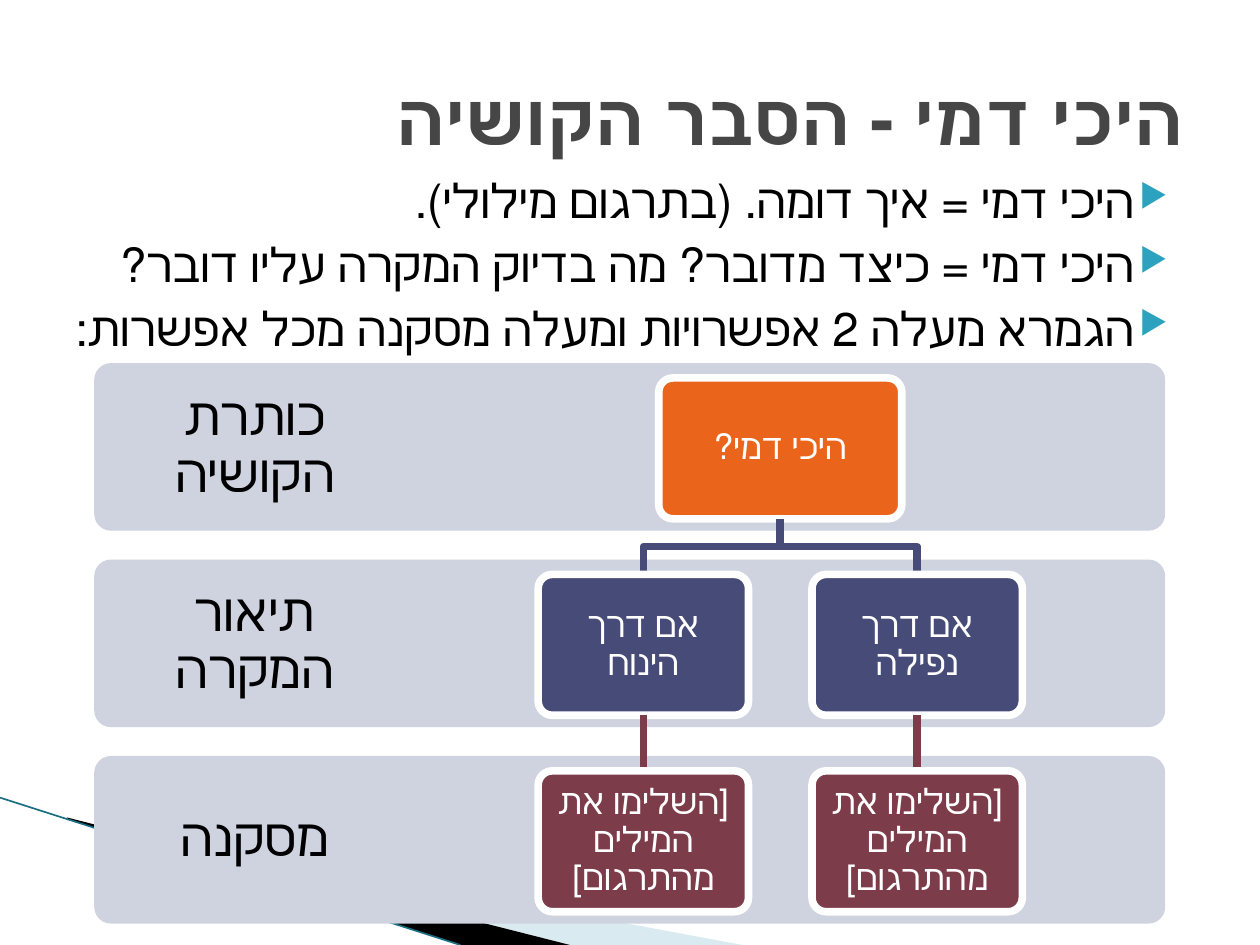
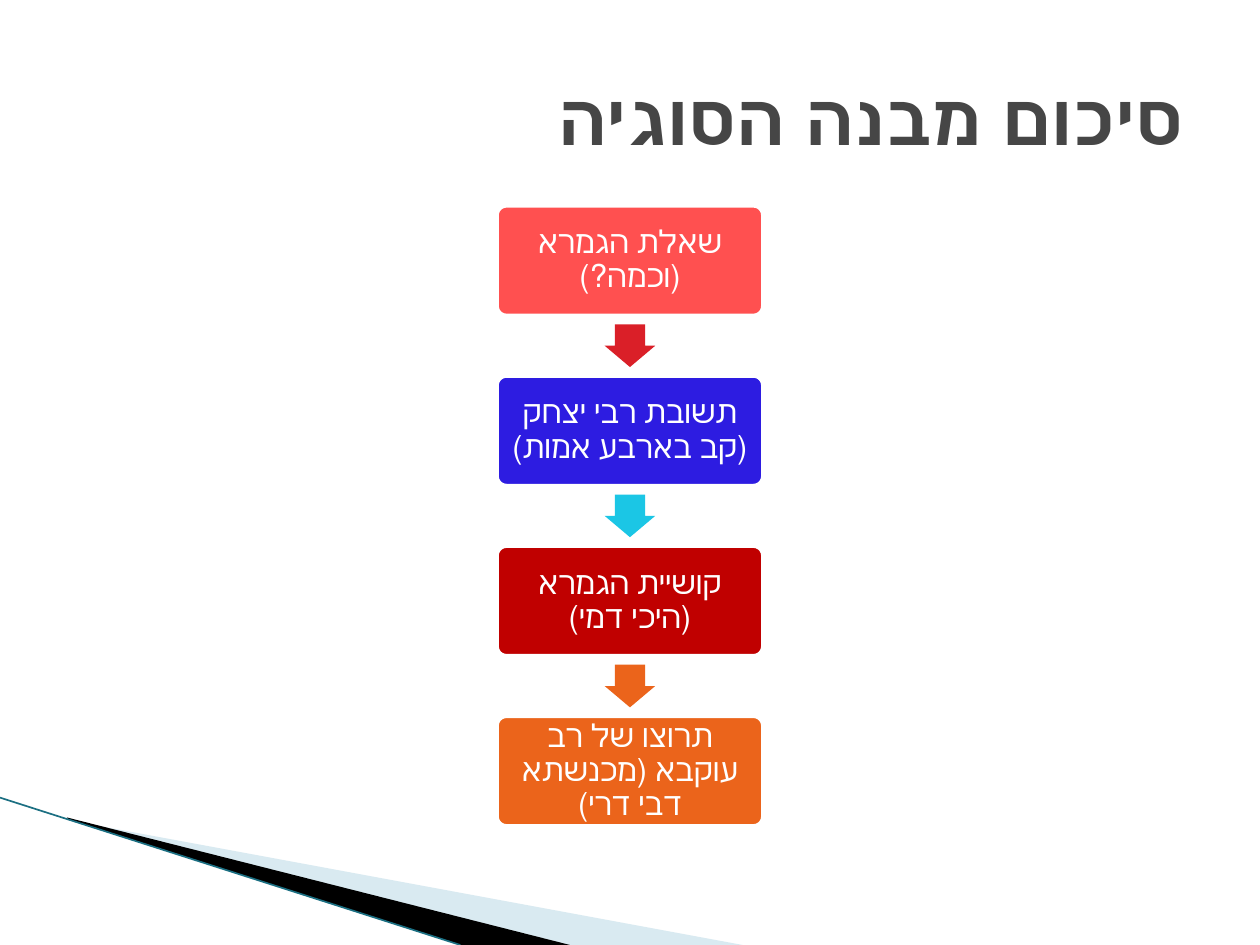
from lxml import etree
from pptx import Presentation
from pptx import util as u
from pptx.dml.color import RGBColor
from pptx.enum import shapes, text
from pptx.oxml.ns import qn

FONT = "DejaVu Sans Mono"
COLORS = {
    "title": "464646", "body": "000000", "white": "FFFFFF", "bullet": "2DA2BF",
    "pale": "A0CBDC", "black": "000000", "edge": "1B6F82", "band": "CED3DF",
    "orange": "EB641B", "indigo": "474B78", "maroon": "7D3C4A", "coral": "FF5050",
    "blue": "2D1CE1", "darkred": "C00000", "red": "DA1F28", "cyan": "1BC6E5",
}
CENTER, RIGHT = text.PP_ALIGN.CENTER, text.PP_ALIGN.RIGHT
OUTLINE = 4.33

# Case tree: bands, rows and columns in centimetres
BAND_LEFT, BAND_TOP, BAND_W, BAND_H, ROW_STEP = 1.9, 7.32, 21.59, 3.38, 3.96
NODE_TOP, NODE_H, ROOT_W, NODE_W = 7.62, 2.84, 4.9, 4.24
ROOT_X, BRANCH_OFFSET = 15.73, 2.76

# Summary flow in centimetres
STEP_LEFT, STEP_TOP, STEP_W, STEP_H, STEP_PITCH = 9.98, 4.11, 5.44, 2.29, 3.43
ARROW_W, ARROW_H = 1.02, 0.86


def rgb(name):
    return RGBColor.from_string(COLORS[name])


def box(left, top, width, height):
    return [u.Cm(v) for v in (left, top, width, height)]


def style_line(line, color, width=OUTLINE):
    line.color.rgb = rgb(color)
    line.width = u.Pt(width)


def paint(sp, fill=None, line=None):
    sp.shadow.inherit = False
    if fill:
        sp.fill.solid()
        sp.fill.fore_color.rgb = rgb(fill)
    else:
        sp.fill.background()
    if line:
        style_line(sp.line, line)
    else:
        sp.line.fill.background()


def write(p, words, size, color, align, bold=False):
    """Write one right-to-left run into a paragraph."""
    p.alignment = align
    p._p.get_or_add_pPr().set("rtl", "1")
    r = p.add_run()
    r.text = words
    r.font.name = FONT
    r.font.size = u.Pt(size)
    r.font.bold = bold
    r.font.color.rgb = rgb(color)
    r._r.get_or_add_rPr().set("lang", "he-IL")


def add_label(sp, words, size, color, inset):
    tf = sp.text_frame
    tf.word_wrap = True
    tf.vertical_anchor = text.MSO_ANCHOR.MIDDLE
    tf.margin_left = tf.margin_right = tf.margin_top = tf.margin_bottom = u.Cm(inset)
    p = tf.paragraphs[0]
    p.line_spacing = 0.9
    write(p, words, size, color, CENTER)


def add_round_box(slide, place, fill, line=None):
    sp = slide.shapes.add_shape(shapes.MSO_SHAPE.ROUNDED_RECTANGLE, *box(*place))
    sp.adjustments[0] = 0.1
    paint(sp, fill, line)
    return sp


def add_path(slide, points, fill=None, line=None):
    """Closed when filled, open when only stroked."""
    pts = [(u.Cm(x), u.Cm(y)) for x, y in points]
    builder = slide.shapes.build_freeform(*pts[0])
    builder.add_line_segments(pts[1:], close=fill is not None)
    sp = builder.convert_to_shape()
    paint(sp, fill, line)
    return sp


def add_line(slide, start, end, color, width=OUTLINE):
    ends = [u.Cm(v) for v in (*start, *end)]
    line = slide.shapes.add_connector(shapes.MSO_CONNECTOR.STRAIGHT, *ends)
    style_line(line.line, color, width)
    etree.SubElement(line._element.spPr, qn("a:effectLst"))
    return line


def add_corner(slide):
    pale = add_path(slide, [(1.4, 16.54), (14.97, 19.05), (11.48, 19.05), (1.4, 16.51)], "pale")
    color = pale._element.spPr.find(".//" + qn("a:srgbClr"))
    etree.SubElement(color, qn("a:alpha")).set("val", "40000")
    add_path(slide, [(1.35, 16.48), (11.49, 19.05), (9.28, 19.05), (1.37, 16.51)], "black")
    add_line(slide, (0, 16.08), (9.28, 19.05), "edge", 0.95)


def add_titled_slide(prs, words):
    slide = prs.slides.add_slide(prs.slide_layouts[5])
    title = slide.shapes.title
    title.left, title.top, title.width, title.height = box(1.27, 0.76, 22.86, 3.18)
    tf = title.text_frame
    tf.auto_size = text.MSO_AUTO_SIZE.NONE
    tf.vertical_anchor = text.MSO_ANCHOR.MIDDLE
    write(tf.paragraphs[0], words, 41, "title", RIGHT, bold=True)
    add_corner(slide)
    return slide


def add_bullets(slide, lines):
    tf = slide.shapes.add_textbox(*box(1.27, 3.33, 22.86, 3.95)).text_frame
    tf.word_wrap = True
    for i, words in enumerate(lines):
        p = tf.add_paragraph() if i else tf.paragraphs[0]
        if i:
            p.space_before = u.Pt(4)
        pPr = p._p.get_or_add_pPr()
        pPr.set("marL", str(u.Cm(1.02)))
        pPr.set("indent", str(-u.Cm(0.71)))
        color = etree.SubElement(pPr, qn("a:buClr"))
        etree.SubElement(color, qn("a:srgbClr")).set("val", COLORS["bullet"])
        etree.SubElement(pPr, qn("a:buSzPct")).set("val", "68000")
        etree.SubElement(pPr, qn("a:buChar")).set("char", "▶")
        write(p, words, 27, "body", RIGHT)


def add_band(slide, row, words):
    top = BAND_TOP + row * ROW_STEP
    add_round_box(slide, (BAND_LEFT, top, BAND_W, BAND_H), "band")
    label = slide.shapes.add_textbox(*box(BAND_LEFT, top, 6.48, BAND_H))
    add_label(label, words, 30, "body", 0.58)


def add_node(slide, row, center, width, words, fill):
    place = (center - width / 2, NODE_TOP + row * ROW_STEP, width, NODE_H)
    sp = add_round_box(slide, place, fill, "white")
    add_label(sp, words, 20, "white", 0.2)
    return sp


def add_branch(slide, center, case, conclusion):
    # Elbow from the root, then the case and its conclusion
    start, end = NODE_TOP + NODE_H, NODE_TOP + ROW_STEP
    bend = (start + end) / 2
    add_path(slide, [(ROOT_X, start), (ROOT_X, bend), (center, bend), (center, end)],
             line="indigo")
    upper = add_node(slide, 1, center, NODE_W, case, "indigo")
    lower = add_node(slide, 2, center, NODE_W, conclusion, "maroon")
    link = add_line(slide, (center, start + ROW_STEP), (center, end + ROW_STEP), "maroon")
    link.begin_connect(upper, 2)
    link.end_connect(lower, 0)
    lower._element.addprevious(link._element)  # keep the lower outline on top


def add_step(slide, index, words, fill):
    place = (STEP_LEFT, STEP_TOP + index * STEP_PITCH, STEP_W, STEP_H)
    add_label(add_round_box(slide, place, fill, "white"), words, 18, "white", 0.18)


def add_step_arrow(slide, index, fill):
    middle = STEP_TOP + index * STEP_PITCH + (STEP_H + STEP_PITCH) / 2
    left = STEP_LEFT + (STEP_W - ARROW_W) / 2
    sp = slide.shapes.add_shape(shapes.MSO_SHAPE.DOWN_ARROW,
                                *box(left, middle - ARROW_H / 2, ARROW_W, ARROW_H))
    sp.adjustments[0], sp.adjustments[1] = 0.6, 0.5
    paint(sp, fill)


def build_question(prs):
    slide = add_titled_slide(prs, "היכי דמי - הסבר הקושיה")
    add_bullets(slide, [
        "היכי דמי = איך דומה. (בתרגום מילולי).",
        "היכי דמי = כיצד מדובר? מה בדיוק המקרה עליו דובר?",
        "הגמרא מעלה 2 אפשרויות ומעלה מסקנה מכל אפשרות:",
    ])
    for row, words in enumerate(["כותרת הקושיה", "תיאור המקרה", "מסקנה"]):
        add_band(slide, row, words)
    add_node(slide, 0, ROOT_X, ROOT_W, "היכי דמי?", "orange")
    for side, case in [(-1, "אם דרך הינוח"), (1, "אם דרך נפילה")]:
        add_branch(slide, ROOT_X + side * BRANCH_OFFSET, case, "[השלימו את המילים מהתרגום]")


def build_summary(prs):
    slide = add_titled_slide(prs, "סיכום מבנה הסוגיה")
    steps = [
        ("שאלת הגמרא (וכמה?)", "coral"),
        ("תשובת רבי יצחק (קב בארבע אמות)", "blue"),
        ("קושיית הגמרא (היכי דמי)", "darkred"),
        ("תרוצו של רב עוקבא (מכנשתא דבי דרי)", "orange"),
    ]
    for i, (words, fill) in enumerate(steps):
        add_step(slide, i, words, fill)
    for i, fill in enumerate(["red", "cyan", "orange"]):
        add_step_arrow(slide, i, fill)


def main():
    prs = Presentation()
    prs.slide_width, prs.slide_height = u.Cm(25.4), u.Cm(19.05)
    build_question(prs)
    build_summary(prs)
    prs.save("out.pptx")


if __name__ == "__main__":
    main()
